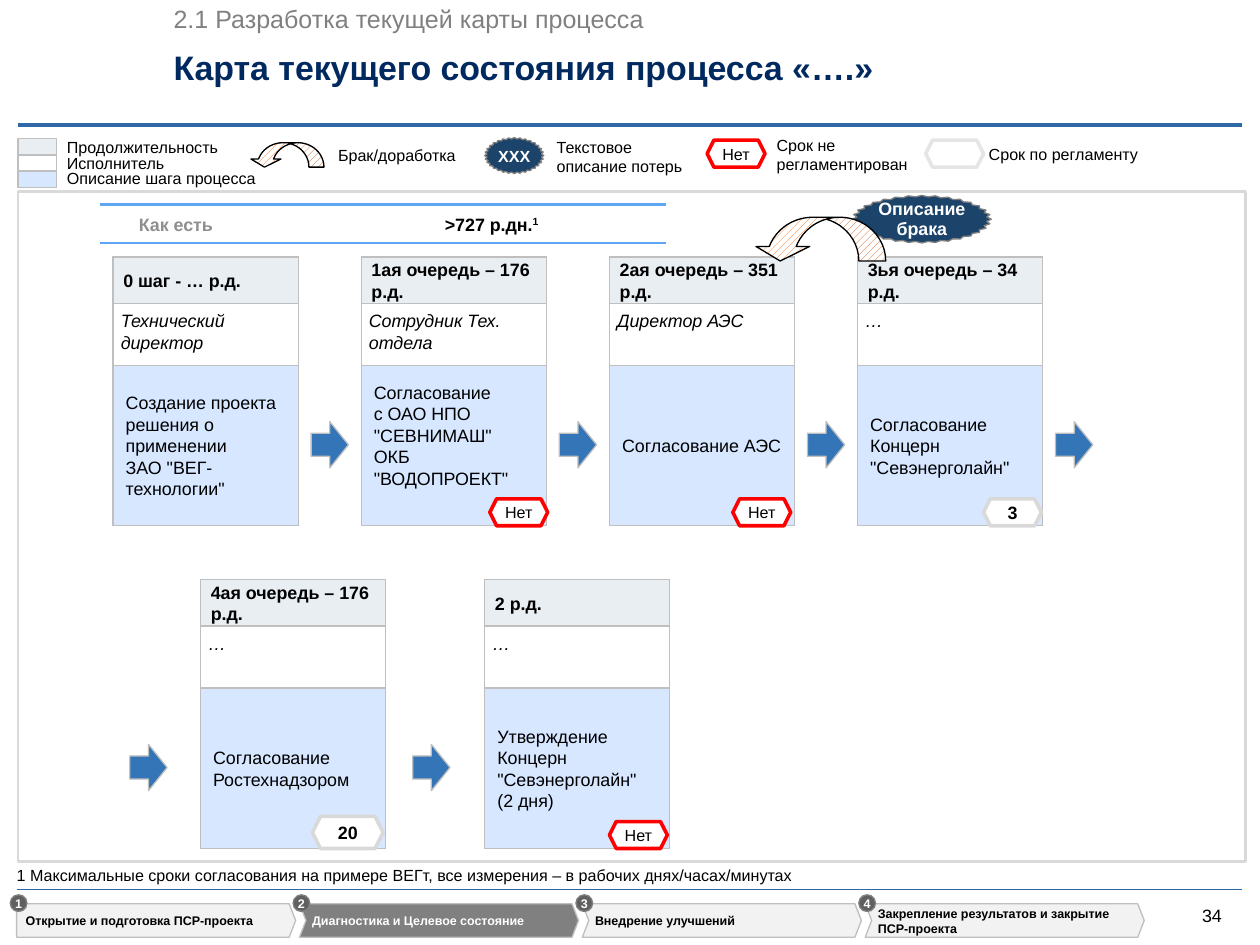
import pptx
import pptx.util
import pptx.oxml
import pptx.dml.color
import pptx.enum.dml
import pptx.enum.shapes
import pptx.enum.text

Inches = pptx.util.Inches
Pt = pptx.util.Pt
RGBColor = pptx.dml.color.RGBColor
SHAPE = pptx.enum.shapes.MSO_SHAPE
ALIGN = pptx.enum.text.PP_ALIGN
ANCHOR = pptx.enum.text.MSO_ANCHOR

BLACK = RGBColor(0x00, 0x00, 0x00)
WHITE = RGBColor(0xFF, 0xFF, 0xFF)
NAVY = RGBColor(0x00, 0x29, 0x60)
RULE_BLUE = RGBColor(0x2E, 0x69, 0xA5)
SKY = RGBColor(0x5E, 0xA6, 0xF3)
ARROW_BLUE = RGBColor(0x33, 0x75, 0xB7)
LOSS_BLUE = RGBColor(0x1C, 0x43, 0x6A)
STEP_BLUE = RGBColor(0xD6, 0xE7, 0xFF)
HEADER_GREY = RGBColor(0xE9, 0xEE, 0xF3)
STAGE_GREY = RGBColor(0xF2, 0xF2, 0xF2)
PALE_GREY = RGBColor(0xE5, 0xE5, 0xE5)
FRAME_GREY = RGBColor(0xD9, 0xD9, 0xD9)
EDGE_GREY = RGBColor(0xBF, 0xBF, 0xBF)
LABEL_GREY = RGBColor(0x8F, 0x8F, 0x8F)
GREY = RGBColor(0x80, 0x80, 0x80)
DARK_GREY = RGBColor(0x60, 0x60, 0x60)
RED = RGBColor(0xFF, 0x00, 0x00)
ORANGE = RGBColor(0xFF, 0x66, 0x00)

deck = pptx.Presentation()
deck.slide_width = Inches(9.8)
deck.slide_height = Inches(7.35)
slide = deck.slides.add_slide(deck.slide_layouts[5])
shapes = slide.shapes


def draw(kind, left, top, width, height, fill=WHITE, edge=EDGE_GREY, weight=0.75):
    shape = shapes.add_shape(kind, Inches(left), Inches(top), Inches(width), Inches(height))
    shape.shadow.inherit = False
    shape.fill.solid()
    shape.fill.fore_color.rgb = fill
    shape.line.color.rgb = edge
    shape.line.width = Pt(weight)
    return shape


def write(shape, text, size, color=BLACK, bold=False, italic=False, align=ALIGN.LEFT,
          anchor=ANCHOR.MIDDLE, margins=(0, 0, 0, 0), wrap=True):
    frame = shape.text_frame
    frame.text = text
    frame.word_wrap = wrap
    frame.vertical_anchor = anchor
    frame.margin_left, frame.margin_top, frame.margin_right, frame.margin_bottom = map(Inches, margins)
    for paragraph in frame.paragraphs:
        paragraph.alignment = align
        paragraph.font.name = "Arial"
        paragraph.font.size = Pt(size)
        paragraph.font.color.rgb = color
        paragraph.font.bold = bold
        paragraph.font.italic = italic


# Title
title = shapes.title
title.left, title.top, title.width, title.height = map(Inches, (1.35, 0.36, 7.31, 0.32))
write(title, "Карта текущего состояния процесса «….»", 19, NAVY, bold=True)

# Frame of the map
draw(SHAPE.RECTANGLE, 0.14, 1.49, 9.55, 5.21, WHITE, FRAME_GREY, 1.5)

# Rules: header, footer and the "as is" band
for left, right, y, color, weight in [
    (0.14, 9.66, 0.97, RULE_BLUE, 2.25),
    (0.13, 9.66, 6.92, RULE_BLUE, 0.75),
    (0.78, 5.18, 1.59, SKY, 1.5),
    (0.78, 5.18, 1.89, SKY, 1.5),
]:
    rule = shapes.add_connector(pptx.enum.shapes.MSO_CONNECTOR.STRAIGHT,
                                Inches(left), Inches(y), Inches(right), Inches(y))
    rule.line.color.rgb = color
    rule.line.width = Pt(weight)
    rule._element.spPr.append(pptx.oxml.parse_xml(
        '<a:effectLst xmlns:a="http://schemas.openxmlformats.org/drawingml/2006/main"/>'))

# Legend symbols
for row, fill in enumerate([HEADER_GREY, WHITE, STEP_BLUE]):
    draw(SHAPE.RECTANGLE, 0.14, 1.08 + 0.125 * row, 0.3, 0.13, fill)
draw(SHAPE.HEXAGON, 7.2, 1.09, 0.45, 0.21, WHITE, PALE_GREY, 2)

# Plain labels: left, top, width, height, text, size, colour, bold, wrap
for left, top, width, height, text, size, color, bold, wrap in [
    (1.35, 0.03, 3.68, 0.24, "2.1 Разработка текущей карты процесса", 14, GREY, False, False),
    (0.52, 1.07, 1.2, 0.15, "Продолжительность", 9, BLACK, False, False),
    (0.52, 1.19, 0.77, 0.15, "Исполнитель", 9, BLACK, False, False),
    (0.52, 1.31, 1.48, 0.15, "Описание шага процесса", 9, BLACK, False, False),
    (2.63, 1.13, 0.97, 0.3, "Брак/доработка", 9, BLACK, False, True),
    (4.33, 1.07, 1.06, 0.3, "Текстовое описание потерь", 9, BLACK, False, True),
    (6.04, 1.05, 1.11, 0.3, "Срок не регламентирован", 9, BLACK, False, True),
    (7.69, 1.12, 1.25, 0.15, "Срок по регламенту", 9, BLACK, False, True),
    (1.08, 1.66, 1.33, 0.17, "Как есть", 10, LABEL_GREY, True, True),
    (0.13, 6.73, 9.35, 0.15, "1 Максимальные сроки согласования на примере ВЕГт, "
     "все измерения – в рабочих днях/часах/минутах", 9, BLACK, False, True),
    (9.35, 7.04, 0.23, 0.17, "34", 10, BLACK, False, False),
]:
    label = shapes.add_textbox(Inches(left), Inches(top), Inches(width), Inches(height))
    write(label, text, size, color, bold, anchor=ANCHOR.TOP, wrap=wrap)

# Total duration with its footnote mark
total = shapes.add_textbox(Inches(3.46), Inches(1.66), Inches(1.39), Inches(0.17))
write(total, ">727 р.дн.", 10, bold=True, anchor=ANCHOR.TOP)
footnote_mark = total.text_frame.paragraphs[0].add_run()
footnote_mark.text = "1"
footnote_mark._r.get_or_add_rPr().set("baseline", "30000")

# Loss markers
for left, top, width, height, text, size, ratio in [
    (3.77, 1.07, 0.46, 0.28, "ХХХ", 9, 0.463),
    (6.63, 1.52, 1.08, 0.37, "Описание\vбрака", 10, 0.47),
]:
    loss = draw(SHAPE.STAR_32_POINT, left, top, width, height, LOSS_BLUE, GREY)
    loss.adjustments[0] = ratio
    write(loss, text, size, WHITE, bold=True, align=ALIGN.CENTER, wrap=False)
    loss.text_frame.paragraphs[0].line_spacing = Pt(11)

# Process steps: left, top, duration, performer, description, space below
PITCH = 1.93
for left, top, duration, performer, description, below in [
    (0.88, 2, "0 шаг - … р.д.", "Технический директор",
     "Создание проекта решения о применении\nЗАО \"ВЕГ-технологии\"", 0.05),
    (0.88 + PITCH, 2, "1ая очередь – 176 р.д.", "Сотрудник Тех. отдела",
     "Согласование\vс ОАО НПО \"СЕВНИМАШ\"\nОКБ \"ВОДОПРОЕКТ\"", 0.21),
    (0.88 + 2 * PITCH, 2, "2ая очередь – 351 р.д.", "Директор АЭС", "Согласование АЭС", 0.05),
    (0.88 + 3 * PITCH, 2, "3ья очередь – 34 р.д.", "…",
     "Согласование Концерн \"Севэнерголайн\"", 0.05),
    (1.56, 4.51, "4ая очередь – 176 р.д.", "…", "Согласование Ростехнадзором", 0.05),
    (3.77, 4.51, "2 р.д.", "…", "Утверждение Концерн \"Севэнерголайн\"\v(2 дня)", 0.05),
]:
    performer_box = draw(SHAPE.RECTANGLE, left, top, 1.44, 2.09)
    write(performer_box, performer, 10, italic=True, anchor=ANCHOR.TOP,
          margins=(0.06, 0.41, 0.05, 0))
    description_box = draw(SHAPE.RECTANGLE, left, top + 0.84, 1.44, 1.25, STEP_BLUE)
    write(description_box, description, 10, margins=(0.1, 0.05, 0.1, below))
    duration_box = draw(SHAPE.RECTANGLE, left, top, 1.44, 0.36, HEADER_GREY)
    write(duration_box, duration, 10, bold=True, margins=(0.08, 0.04, 0.04, 0.04))

# Arrows between the steps
for left, top in [(2.42 + PITCH * i, 3.28) for i in range(4)] + [(1.01, 5.79), (3.21, 5.79)]:
    draw(SHAPE.RIGHT_ARROW, left, top, 0.29, 0.36, ARROW_BLUE)

# Deadlines: red when not regulated, grey when regulated
for left, top, width, height, text in [
    (5.5, 1.09, 0.45, 0.21, "Нет"),
    (3.81, 3.88, 0.45, 0.21, "Нет"),
    (5.7, 3.88, 0.45, 0.21, "Нет"),
    (7.65, 3.88, 0.45, 0.21, "3"),
    (2.43, 6.35, 0.55, 0.25, "20"),
    (4.74, 6.39, 0.45, 0.21, "Нет"),
]:
    regulated = text != "Нет"
    deadline = draw(SHAPE.HEXAGON, left, top, width, height, WHITE,
                    FRAME_GREY if regulated else RED, 2)
    write(deadline, text, 10 if regulated else 9, bold=regulated,
          align=ALIGN.CENTER, wrap=False)

# Rework arrows
for left, top, width, height in [(5.86, 1.69, 1.03, 0.34), (1.94, 1.11, 0.58, 0.19)]:
    rework = draw(SHAPE.CURVED_DOWN_ARROW, left, top, width, height, edge=BLACK)
    for index, ratio in enumerate([0.615, 1.229, 0.333]):
        rework.adjustments[index] = ratio
    rework.fill.patterned()
    rework.fill.pattern = pptx.enum.dml.MSO_PATTERN.WIDE_UPWARD_DIAGONAL
    rework.fill.fore_color.rgb = ORANGE
    rework.fill.back_color.rgb = WHITE
    rework._element.spPr.xfrm.set("flipH", "1")

# Project stages; the second one is current
for index, text in enumerate([
    "Открытие и подготовка ПСР-проекта",
    "Диагностика и Целевое состояние",
    "Внедрение улучшений",
    "Закрепление результатов и закрытие ПСР-проекта",
]):
    left = 0.13 + 2.2 * index
    current = index == 1
    notch = 0.05 if index else 0
    outline = shapes.build_freeform(Inches(left), Inches(7.03))
    outline.add_line_segments([(Inches(left + x), Inches(y)) for x, y in [
        (2.12, 7.03), (2.17, 7.16), (2.12, 7.29), (0, 7.29), (notch, 7.16)]])
    stage = outline.convert_to_shape()
    stage.shadow.inherit = False
    stage.fill.solid()
    stage.fill.fore_color.rgb = GREY if current else STAGE_GREY
    stage.line.color.rgb = EDGE_GREY
    stage.line.width = Pt(0.75)
    write(stage, text, 7, WHITE if current else BLACK, bold=True,
          margins=(0.1 if index else 0.07, 0, 0.05, 0))
    number = draw(SHAPE.OVAL, left - 0.05, 6.96, 0.13, 0.13, DARK_GREY, GREY)
    write(number, str(index + 1), 7, WHITE, bold=True, align=ALIGN.CENTER, wrap=False)

deck.save("out.pptx")
